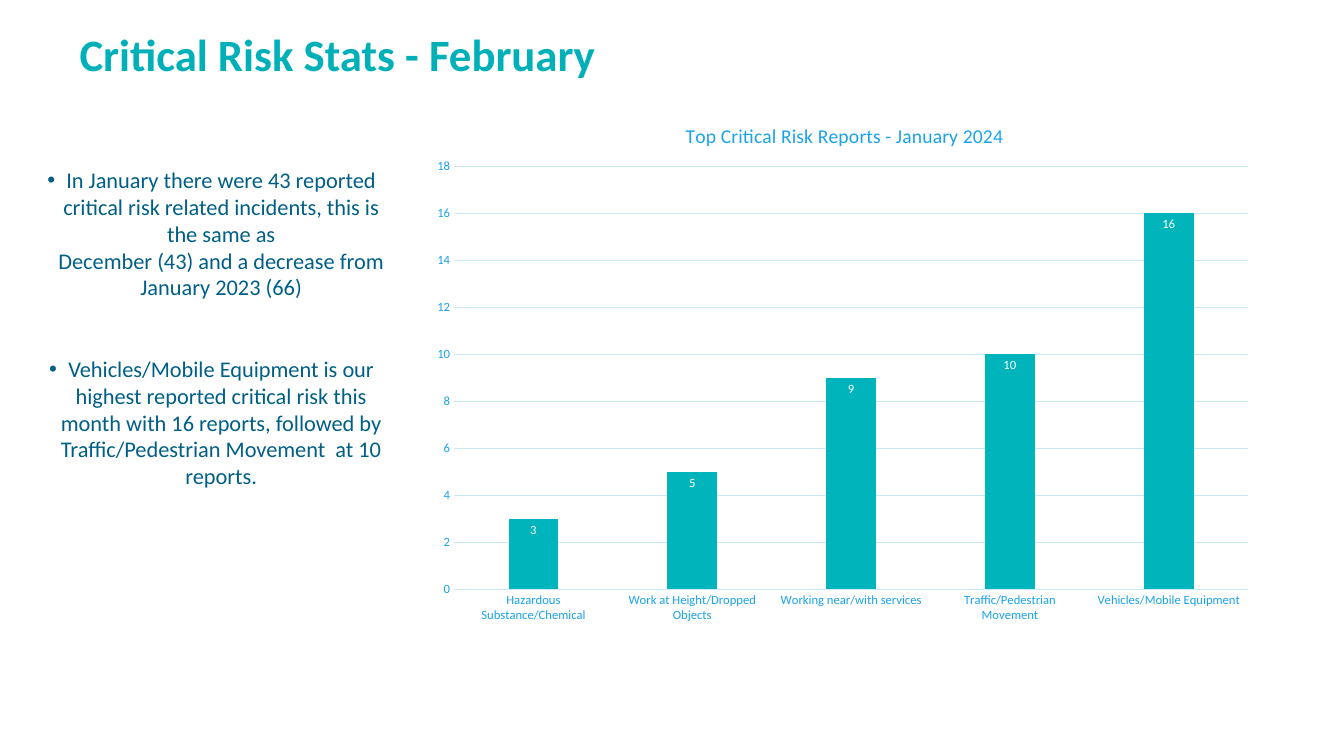
from dataclasses import dataclass

from lxml import etree
from pptx import Presentation
from pptx.chart.data import CategoryChartData
from pptx.dml.color import RGBColor
from pptx.enum.chart import XL_CHART_TYPE, XL_LABEL_POSITION, XL_TICK_MARK
from pptx.enum.text import MSO_ANCHOR, MSO_AUTO_SIZE, PP_ALIGN
from pptx.oxml.ns import qn
from pptx.util import Cm, Pt

COLUMN = XL_CHART_TYPE.COLUMN_CLUSTERED
INSIDE = XL_LABEL_POSITION.INSIDE_END
NO_TICK = XL_TICK_MARK.NONE
TOP = MSO_ANCHOR.TOP
FIXED = MSO_AUTO_SIZE.NONE
LEFT = PP_ALIGN.LEFT
CENTER = PP_ALIGN.CENTER

FONT = "Calibri"
COLORS = {
    "title": "00B0B9",
    "note": "005F86",
    "bar": "00B4BC",
    "axis": "1AA3EB",
    "grid": "CAEAFA",
    "chart": "0A5075",
    "label": "FFFFFF",
}


@dataclass
class Note:
    text: str
    gap: float


@dataclass
class Risk:
    name: str
    count: int


NOTES = [
    Note("In January there were 43 reported critical risk related incidents, "
         "this is the same as\vDecember (43) and a decrease from January 2023 (66)", 0),
    Note("Vehicles/Mobile Equipment is our highest reported critical risk this month "
         "with 16 reports, followed by Traffic/Pedestrian Movement  at 10 reports.", 39),
]
RISKS = [
    Risk("Hazardous Substance/Chemical", 3),
    Risk("Work at Height/Dropped Objects", 5),
    Risk("Working near/with services", 9),
    Risk("Traffic/Pedestrian Movement", 10),
    Risk("Vehicles/Mobile Equipment", 16),
]


def style(font, size: float, color: str, bold: bool = False) -> None:
    font.name = FONT
    font.size = Pt(size)
    font.bold = bold
    font.color.rgb = RGBColor.from_string(COLORS[color])


def rule(line) -> None:
    line.color.rgb = RGBColor.from_string(COLORS["grid"])
    line.width = Pt(0.75)


def place(parent, index: int, **marks) -> None:
    for old in parent.findall(qn("c:layout")):
        parent.remove(old)
    layout = etree.Element(qn("c:layout"))
    manual = etree.SubElement(layout, qn("c:manualLayout"))
    for tag, value in marks.items():
        etree.SubElement(manual, qn(f"c:{tag}")).set("val", str(value))
    parent.insert(index, layout)


def add_title(slide) -> None:
    title = slide.shapes.title
    title.left, title.top = Cm(1.75), Cm(0.76)
    title.width, title.height = Cm(30.35), Cm(2.36)
    frame = title.text_frame
    frame.text = "Critical Risk Stats - February"
    frame.vertical_anchor = TOP
    frame.auto_size = FIXED
    line = frame.paragraphs[0]
    line.alignment = LEFT
    line.line_spacing = Pt(32)
    style(line.runs[0].font, 32, "title", True)


def add_note(line, note: Note) -> None:
    line.text = note.text
    line.alignment = CENTER
    line.space_before = Pt(note.gap)
    props = line._p.get_or_add_pPr()
    props.set("marL", str(Cm(0.48)))
    props.set("indent", str(-Cm(0.48)))
    etree.SubElement(props, qn("a:buFont")).set("typeface", "Arial")
    etree.SubElement(props, qn("a:buChar")).set("char", "•")
    for run in line.runs:
        style(run.font, 16, "note")


def add_notes(slide) -> None:
    box = slide.shapes.add_textbox(Cm(0.56), Cm(4.06), Cm(9.55), Cm(8.46))
    frame = box.text_frame
    frame.word_wrap = True
    for index, note in enumerate(NOTES):
        add_note(frame.add_paragraph() if index else frame.paragraphs[0], note)


def add_chart(slide) -> None:
    data = CategoryChartData()
    data.categories = [risk.name for risk in RISKS]
    data.add_series("Series 1", [risk.count for risk in RISKS])
    chart = slide.shapes.add_chart(
        COLUMN, Cm(10.59), Cm(2.44), Cm(21.29), Cm(13.49), data).chart
    style(chart.font, 10, "chart")
    chart.has_legend = False

    head = chart.chart_title
    head.text_frame.text = "Top Critical Risk Reports - January 2024"
    style(head.text_frame.paragraphs[0].runs[0].font, 14, "axis")
    place(head._element, 1, xMode="edge", yMode="edge", x=0.31, y=0.04)
    place(chart._chartSpace.chart.plotArea, 0, layoutTarget="inner",
          xMode="edge", yMode="edge", x=0.04, y=0.13, w=0.94, h=0.79)

    for axis in (chart.category_axis, chart.value_axis):
        axis.major_tick_mark = axis.minor_tick_mark = NO_TICK
        style(axis.tick_labels.font, 9, "axis")
    rule(chart.category_axis.format.line)
    scale = chart.value_axis
    scale.minimum_scale, scale.maximum_scale, scale.major_unit = 0, 18, 2
    scale.format.line.fill.background()
    rule(scale.major_gridlines.format.line)

    plot = chart.plots[0]
    plot.gap_width, plot.overlap = 219, -27
    plot.vary_by_categories = False
    bars = plot.series[0]
    bars.format.fill.solid()
    bars.format.fill.fore_color.rgb = RGBColor.from_string(COLORS["bar"])
    labels = bars.data_labels
    labels.show_value = True
    labels.position = INSIDE
    style(labels.font, 9, "label")


def main() -> None:
    deck = Presentation()
    deck.slide_width, deck.slide_height = Cm(33.87), Cm(19.05)
    slide = deck.slides.add_slide(deck.slide_layouts[5])
    add_title(slide)
    add_notes(slide)
    add_chart(slide)
    deck.save("out.pptx")


if __name__ == "__main__":
    main()
